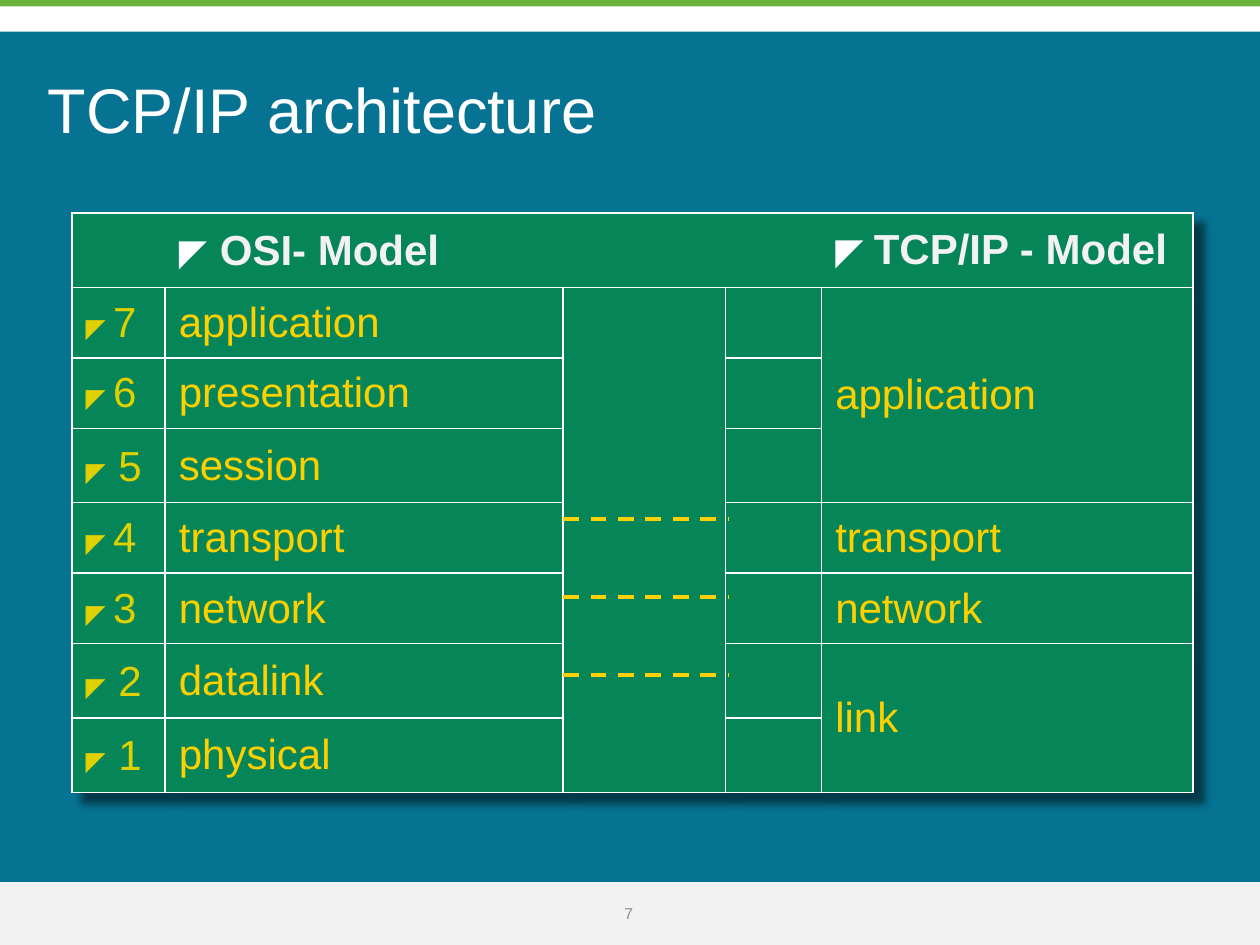
from lxml.etree import SubElement
from pptx import Presentation
from pptx.dml.color import RGBColor
from pptx.enum.dml import MSO_LINE
from pptx.enum.shapes import MSO_CONNECTOR, MSO_SHAPE
from pptx.enum.text import MSO_ANCHOR, PP_ALIGN
from pptx.oxml.ns import qn
from pptx.util import Emu, Pt

SCALE = 9144  # EMU per px, 100 px to the inch
COLORS = {
    "white": "FFFFFF", "footer": "F2F2F2", "accent": "6CB33F", "panel": "067392",
    "number": "8C8C8C", "cell": "068658", "layer": "FFD000", "marker": "E1D000",
}
COLUMNS = [74, 316, 129, 76, 295]
ROWS = [59, 56, 56, 59, 56, 56, 59, 59]
OSI_LAYERS = ["application", "presentation", "session", "transport",
              "network", "datalink", "physical"]
WIDE_GAP_LAYERS = {5, 2, 1}
# first row, last row, name
TCP_LAYERS = [(1, 3, "application"), (4, 4, "transport"),
              (5, 5, "network"), (6, 7, "link")]


def px(length):
    return Emu(length * SCALE)


def color(name):
    return RGBColor.from_string(COLORS[name])


class SlideBuilder:
    def __init__(self, slide, font="Arial"):
        self.slide = slide
        self.font = font

    def bar(self, left, top, width, height, fill):
        shape = self.slide.shapes.add_shape(
            MSO_SHAPE.RECTANGLE, px(left), px(top), px(width), px(height))
        shape.shadow.inherit = False
        shape.fill.solid()
        shape.fill.fore_color.rgb = color(fill)
        shape.line.fill.background()

    def style(self, font, size, fill):
        font.name = self.font
        font.size = Pt(size)
        font.color.rgb = color(fill)

    def text(self, left, top, width, height, words, size, fill,
             align=PP_ALIGN.LEFT, bottom=0, spacing=1.0):
        box = self.slide.shapes.add_textbox(px(left), px(top), px(width), px(height))
        frame = box.text_frame
        frame.word_wrap = True
        frame.vertical_anchor = MSO_ANCHOR.MIDDLE
        frame.margin_left = frame.margin_right = frame.margin_top = 0
        frame.margin_bottom = px(bottom)
        para = frame.paragraphs[0]
        para.text = words
        para.alignment = align
        para.line_spacing = spacing
        self.style(para.font, size, fill)

    def dashed_line(self, left, right, y):
        line = self.slide.shapes.add_connector(
            MSO_CONNECTOR.STRAIGHT, px(left), px(y), px(right), px(y))
        line.line.color.rgb = color("layer")
        line.line.width = Pt(2.25)
        line.line.dash_style = MSO_LINE.DASH
        SubElement(line._element.spPr, qn("a:effectLst"))

    def table(self, left, top, columns, rows):
        table = self.slide.shapes.add_table(
            len(rows), len(columns), px(left), px(top),
            px(sum(columns)), px(sum(rows))).table
        table.first_row = table.horz_banding = False
        for column, width in zip(table.columns, columns):
            column.width = px(width)
        for row, height in zip(table.rows, rows):
            row.height = px(height)
        self.table_shadow(table)
        return table

    def table_shadow(self, table):
        effects = SubElement(table._tbl.tblPr, qn("a:effectLst"))
        table._tbl.tblPr.insert(0, effects)
        shadow = SubElement(effects, qn("a:outerShdw"), blurRad="50800",
                            dist="107763", dir="2700000", algn="tl")
        black = SubElement(shadow, qn("a:srgbClr"), val="000000")
        SubElement(black, qn("a:alpha"), val="50000")

    def cell_frame(self, cell, sides):
        """Draw white borders on the given sides, none on the others, and fill."""
        properties = cell._tc.get_or_add_tcPr()
        for side in "LRTB":
            border = SubElement(properties, qn(f"a:ln{side}"), w=str(Pt(1)))
            if side in sides:
                fill = SubElement(border, qn("a:solidFill"))
                SubElement(fill, qn("a:srgbClr"), val=COLORS["white"])
            else:
                SubElement(border, qn("a:noFill"))
        cell.fill.solid()
        cell.fill.fore_color.rgb = color("cell")

    def cell_text(self, cell, *spans, bold_last=False):
        """Fill a cell with (words, size, color) spans."""
        cell.vertical_anchor = MSO_ANCHOR.MIDDLE
        cell.margin_left = cell.margin_right = px(11)
        cell.margin_top = cell.margin_bottom = px(5)
        para = cell.text_frame.paragraphs[0]
        for words, size, fill in spans:
            span = para.add_run()
            span.text = words
            self.style(span.font, size, fill)
        span.font.bold = bold_last


def fill_table(builder, table):
    last = len(COLUMNS) - 1
    for row in range(len(ROWS)):
        for column in range(len(COLUMNS)):
            sides = "LRTB"
            if row == 0:
                sides = "TB" + "L" * (column == 0) + "R" * (column == last)
            builder.cell_frame(table.cell(row, column), sides)

    builder.cell_text(table.cell(0, 1), ("◤", 21, "white"), (" ", 26, "marker"),
                      ("OSI- Model", 24, "footer"), bold_last=True)
    builder.cell_text(table.cell(0, last), ("◤ ", 21, "white"),
                      ("TCP/IP - Model", 24, "footer"), bold_last=True)

    for row, name in enumerate(OSI_LAYERS, start=1):
        number = len(ROWS) - row
        gap = 26 if number in WIDE_GAP_LAYERS else 15
        builder.cell_text(table.cell(row, 0), ("◤", 15, "marker"),
                          (" ", gap, "marker"), (str(number), 24, "marker"))
        builder.cell_text(table.cell(row, 1), (name, 24, "layer"))

    table.cell(1, 2).merge(table.cell(len(ROWS) - 1, 2))
    for first, final, name in TCP_LAYERS:
        if final > first:
            table.cell(first, last).merge(table.cell(final, last))
        builder.cell_text(table.cell(first, last), (name, 24, "layer"))


def main():
    deck = Presentation()
    deck.slide_width, deck.slide_height = px(1000), px(750)
    builder = SlideBuilder(deck.slides.add_slide(deck.slide_layouts[6]))

    builder.bar(0, 700, 1000, 50, "footer")
    builder.bar(0, 0, 1000, 5, "accent")
    builder.bar(0, 25, 1000, 675, "panel")
    builder.text(38, 30, 925, 125, "TCP/IP architecture", 36, "white",
                 bottom=5, spacing=0.9)
    builder.text(478, 710, 42, 30, "7", 9, "number", align=PP_ALIGN.CENTER)

    fill_table(builder, builder.table(57, 169, COLUMNS, ROWS))
    for index in range(3):
        builder.dashed_line(447, 578, 412 + 62 * index)

    deck.save("out.pptx")


if __name__ == "__main__":
    main()
